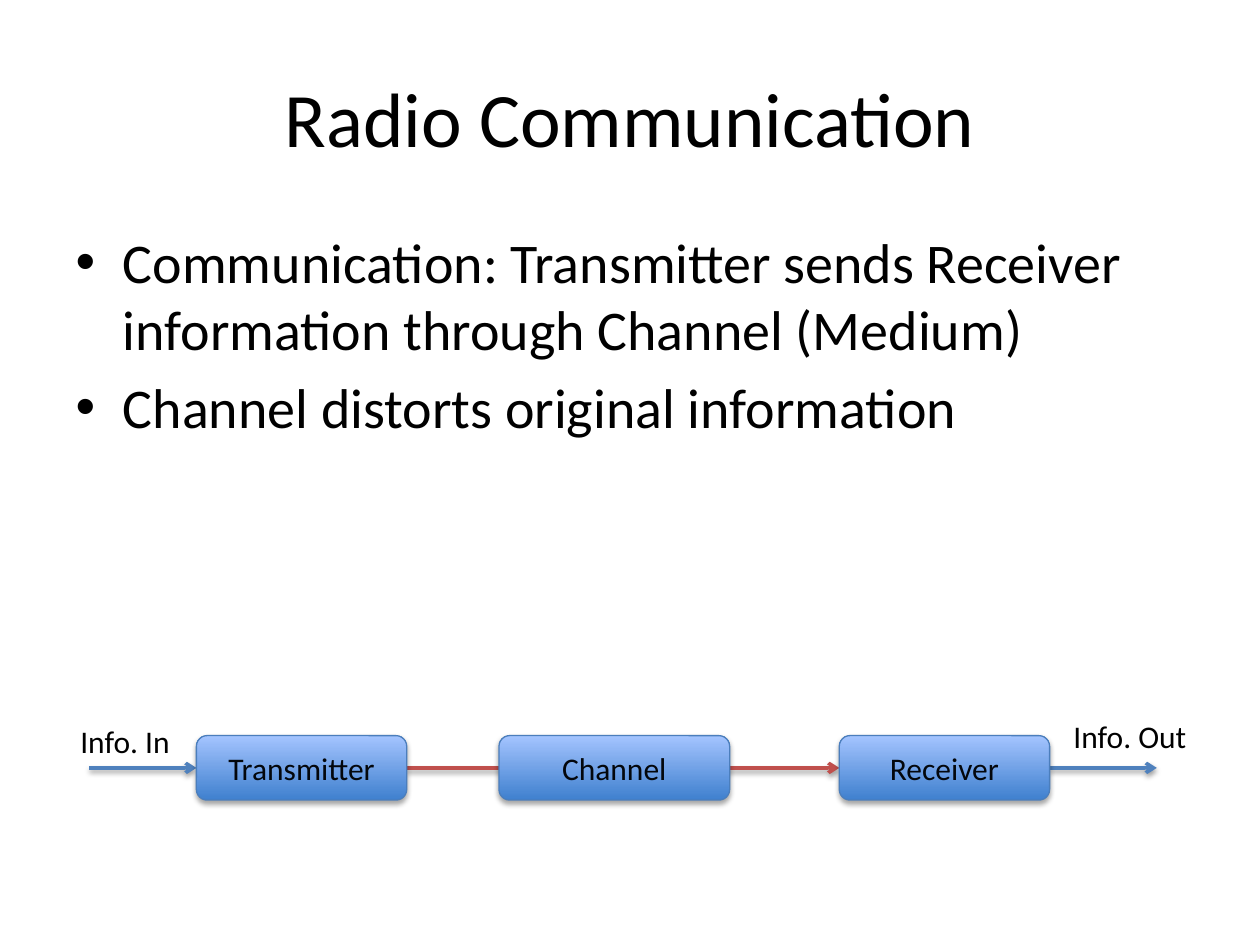
from lxml import etree
from pptx import Presentation
from pptx.dml.color import RGBColor
from pptx.enum.shapes import MSO_CONNECTOR, MSO_SHAPE
from pptx.enum.text import MSO_ANCHOR, MSO_AUTO_SIZE, PP_ALIGN
from pptx.oxml import parse_xml
from pptx.util import Cm, Pt

STRAIGHT = MSO_CONNECTOR.STRAIGHT
ROUNDED = MSO_SHAPE.ROUNDED_RECTANGLE
A = "http://schemas.openxmlformats.org/drawingml/2006/main"
FONT = "Calibri"
COLORS = {
    "text": "000000", "stage_text": "03070C",
    "stage_bottom": "3F80CE", "stage_top": "A4C4FF", "stage_line": "4B7EBC",
    "signal": "4F81BD", "channel": "C0504D", "shadow": "000000",
}

TITLE = "Radio Communication"
BULLETS = [
    "Communication: Transmitter sends Receiver information through Channel (Medium)",
    "Channel distorts original information",
]
# Lengths in centimetres
TITLE_BOX = (1.27, 0.76, 22.86, 3.18)
BULLETS_BOX = (1.27, 4.45, 22.86, 8.56)
STAGES = [  # text, left, width
    ("Transmitter", 3.96, 4.24),
    ("Channel", 10.06, 4.65),
    ("Receiver", 16.92, 4.24),
]
END_LABELS = [  # text, left, top, width
    ("Info. In", 1.37, 14.43, 2.34),
    ("Info. Out", 21.39, 14.32, 2.84),
]
AXIS_Y = 15.48
STAGE_HEIGHT = 1.3
LABEL_HEIGHT = 1.02
SIGNAL_LENGTH = 2.16


def rgb(name):
    return RGBColor.from_string(COLORS[name])


def place(shape, box):
    shape.left, shape.top, shape.width, shape.height = map(Cm, box)


def format_text(frame, size, color):
    for paragraph in frame.paragraphs:
        for run in paragraph.runs:
            run.font.name = FONT
            run.font.size = Pt(size)
            run.font.color.rgb = rgb(color)


def add_shadow(shape, distance, opacity):
    """Cast a soft shadow downwards; opacity is a percentage."""
    shape._element.spPr.append(parse_xml(
        f'<a:effectLst xmlns:a="{A}"><a:outerShdw blurRad="{Pt(3.1)}" '
        f'dist="{Pt(distance)}" dir="5400000" rotWithShape="0">'
        f'<a:srgbClr val="{COLORS["shadow"]}"><a:alpha val="{opacity * 1000}"/>'
        '</a:srgbClr></a:outerShdw></a:effectLst>'))


def add_arrow(slide, start, end, color):
    arrow = slide.shapes.add_connector(
        STRAIGHT, Cm(start), Cm(AXIS_Y), Cm(end), Cm(AXIS_Y))
    arrow.line.color.rgb = rgb(color)
    arrow.line.width = Pt(2)
    etree.SubElement(arrow.line._get_or_add_ln(), f"{{{A}}}tailEnd", type="arrow")
    add_shadow(arrow, 1.6, 38)


def add_stage(slide, text, left, width):
    stage = slide.shapes.add_shape(
        ROUNDED, Cm(left), Cm(AXIS_Y - STAGE_HEIGHT / 2), Cm(width), Cm(STAGE_HEIGHT))
    stage.fill.gradient()
    stage.fill.gradient_angle = 90
    for stop, position, color in zip(
            stage.fill.gradient_stops, (0, 1), ("stage_bottom", "stage_top")):
        stop.position = position
        stop.color.rgb = rgb(color)
    stage.line.color.rgb = rgb("stage_line")
    stage.line.width = Pt(0.75)
    add_shadow(stage, 1.8, 35)
    frame = stage.text_frame
    frame.text = text
    frame.vertical_anchor = MSO_ANCHOR.MIDDLE
    frame.paragraphs[0].alignment = PP_ALIGN.CENTER
    format_text(frame, 18, "stage_text")


def add_end_label(slide, text, left, top, width):
    label = slide.shapes.add_textbox(Cm(left), Cm(top), Cm(width), Cm(LABEL_HEIGHT))
    frame = label.text_frame
    frame.text = text
    frame.word_wrap = False
    frame.auto_size = MSO_AUTO_SIZE.SHAPE_TO_FIT_TEXT
    format_text(frame, 18, "text")


def main():
    deck = Presentation()
    deck.slide_width, deck.slide_height = Cm(25.4), Cm(19.05)
    slide = deck.slides.add_slide(deck.slide_layouts.get_by_name("Title and Content"))

    title, bullets = slide.placeholders
    for holder, box, text, size in (
            (title, TITLE_BOX, TITLE, 44),
            (bullets, BULLETS_BOX, "\n".join(BULLETS), 32)):
        place(holder, box)
        holder.text_frame.text = text
        format_text(holder.text_frame, size, "text")

    chain_start = STAGES[0][1]
    sent = chain_start + STAGES[0][2]
    received = STAGES[-1][1]
    chain_end = received + STAGES[-1][2]
    add_arrow(slide, chain_start - SIGNAL_LENGTH, chain_start, "signal")
    add_arrow(slide, sent, received, "channel")
    add_arrow(slide, chain_end, chain_end + SIGNAL_LENGTH, "signal")
    for stage in STAGES:
        add_stage(slide, *stage)
    for label in END_LABELS:
        add_end_label(slide, *label)

    deck.save("out.pptx")


if __name__ == "__main__":
    main()
